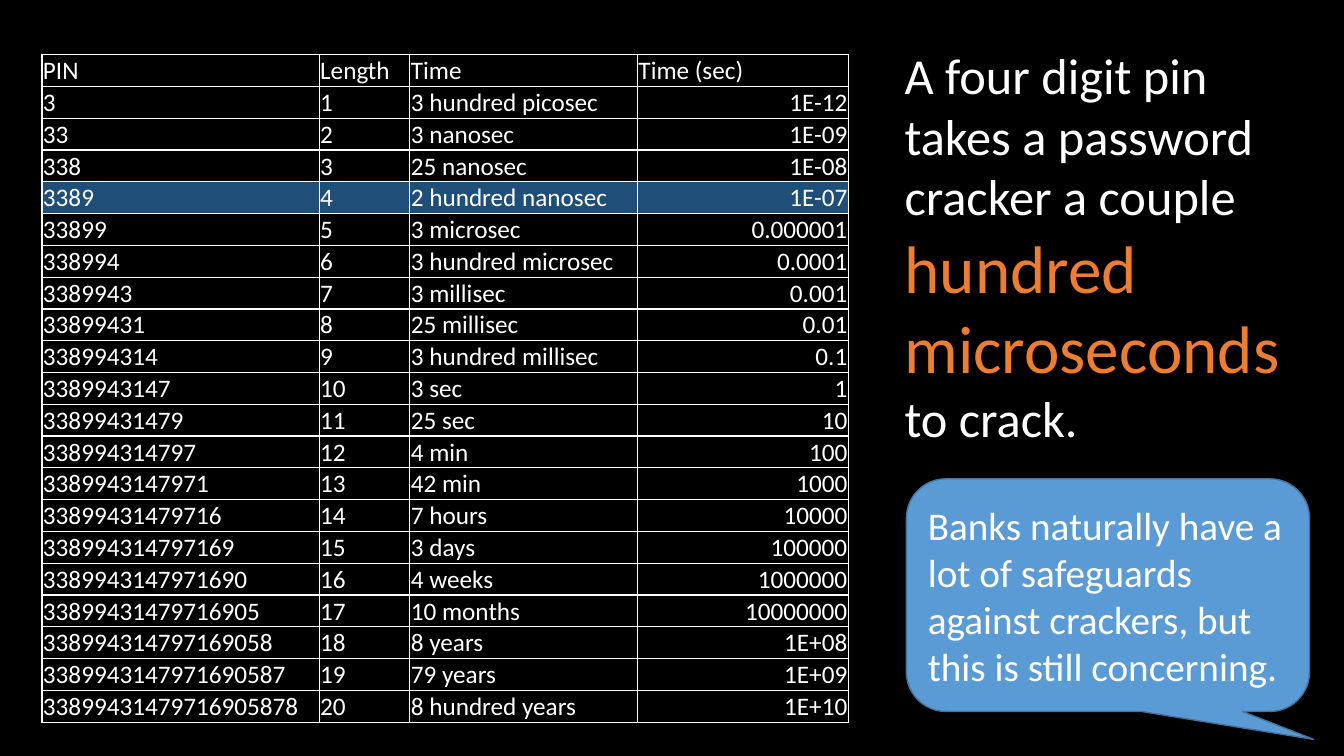
from lxml import etree
from pptx import Presentation
from pptx import util as u
from pptx.dml.color import RGBColor
from pptx.enum import shapes, text
from pptx.oxml import ns

BLACK = RGBColor(0x00, 0x00, 0x00)
WHITE = RGBColor(0xFF, 0xFF, 0xFF)
NAVY = RGBColor(0x1F, 0x4E, 0x79)
ORANGE = RGBColor(0xED, 0x7D, 0x31)
BLUE = RGBColor(0x5B, 0x9B, 0xD5)
DARK_BLUE = RGBColor(0x43, 0x73, 0x9E)

FULL_PIN = "33899431479716905878"
HEADINGS = ("PIN", "Length", "Time", "Time (sec)")
CRACK_TIMES = (
    ("3 hundred picosec", "1E-12"),
    ("3 nanosec", "1E-09"),
    ("25 nanosec", "1E-08"),
    ("2 hundred nanosec", "1E-07"),
    ("3 microsec", "0.000001"),
    ("3 hundred microsec", "0.0001"),
    ("3 millisec", "0.001"),
    ("25 millisec", "0.01"),
    ("3 hundred millisec", "0.1"),
    ("3 sec", "1"),
    ("25 sec", "10"),
    ("4 min", "100"),
    ("42 min", "1000"),
    ("7 hours", "10000"),
    ("3 days", "100000"),
    ("4 weeks", "1000000"),
    ("10 months", "10000000"),
    ("8 years", "1E+08"),
    ("79 years", "1E+09"),
    ("8 hundred years", "1E+10"),
)
PIN_LENGTH = 4


def apply(target, values):
    for name, value in values.items():
        setattr(target, name, value)


class SlideBuilder:
    """Places elements on a grid of 32 columns by 18 rows."""

    font_name = "Calibri"
    columns, rows = 32, 18

    def __init__(self, presentation):
        self.column = presentation.slide_width / self.columns
        self.row = presentation.slide_height / self.rows
        self.slide = presentation.slides.add_slide(presentation.slide_layouts[6])
        self.fill(self.slide.background, BLACK)

    def box(self, left, top, width, height):
        return (round(left * self.column), round(top * self.row),
                round(width * self.column), round(height * self.row))

    def fill(self, target, color):
        target.fill.solid()
        target.fill.fore_color.rgb = color

    def add_words(self, paragraph, words, size, color=WHITE):
        run = paragraph.add_run()
        run.text = words
        apply(run.font, {"name": self.font_name, "size": u.Pt(size)})
        run.font.color.rgb = color

    def border(self, cell, color):
        properties = cell._tc.get_or_add_tcPr()
        for index, side in enumerate(("a:lnL", "a:lnR", "a:lnT", "a:lnB")):
            line = etree.Element(ns.qn(side), w=str(u.Pt(1)))
            solid = etree.SubElement(line, ns.qn("a:solidFill"))
            etree.SubElement(solid, ns.qn("a:srgbClr"), val=str(color))
            properties.insert(index, line)

    def table(self, left, top, widths, row_height, records, marked_row):
        place = self.box(left, top, sum(widths), row_height * len(records))
        table = self.slide.shapes.add_table(len(records), len(widths), *place).table
        for column, width in zip(table.columns, widths):
            column.width = round(width * self.column)
        for i, record in enumerate(records):
            table.rows[i].height = round(row_height * self.row)
            for j, words in enumerate(record):
                cell = table.cell(i, j)
                apply(cell, {
                    "margin_left": u.Inches(0.01),
                    "margin_right": u.Inches(0.01),
                    "margin_top": u.Inches(0.01),
                    "margin_bottom": 0,
                    "vertical_anchor": text.MSO_ANCHOR.BOTTOM,
                })
                self.fill(cell, NAVY if i == marked_row else BLACK)
                self.border(cell, WHITE)
                paragraph = cell.text_frame.paragraphs[0]
                if i > 0 and j == len(widths) - 1:
                    paragraph.alignment = text.PP_ALIGN.RIGHT
                self.add_words(paragraph, words, 18)

    def text_box(self, place, runs):
        frame = self.slide.shapes.add_textbox(*self.box(*place)).text_frame
        apply(frame, {"word_wrap": True,
                      "auto_size": text.MSO_AUTO_SIZE.SHAPE_TO_FIT_TEXT})
        for words, size, color in runs:
            self.add_words(frame.paragraphs[0], words, size, color)

    def callout(self, place, words, size, adjustments):
        shape = self.slide.shapes.add_shape(
            shapes.MSO_SHAPE.ROUNDED_RECTANGULAR_CALLOUT, *self.box(*place))
        shape.shadow.inherit = False
        for index, value in enumerate(adjustments):
            shape.adjustments[index] = value
        self.fill(shape, BLUE)
        shape.line.color.rgb = DARK_BLUE
        shape.line.width = u.Pt(1)
        apply(shape.text_frame, {"word_wrap": True,
                                 "vertical_anchor": text.MSO_ANCHOR.MIDDLE})
        paragraph = shape.text_frame.paragraphs[0]
        paragraph.alignment = text.PP_ALIGN.LEFT
        self.add_words(paragraph, words, size)


def main():
    presentation = Presentation()
    apply(presentation, {"slide_width": u.Inches(13.33),
                         "slide_height": u.Inches(7.5)})
    builder = SlideBuilder(presentation)

    # Cracking time for each PIN length
    records = [HEADINGS] + [
        (FULL_PIN[:length], str(length), *times)
        for length, times in enumerate(CRACK_TIMES, start=1)
    ]
    builder.table(1, 1.3, (6.6, 2.16, 5.42, 5.02), 0.74, records, PIN_LENGTH)

    # Main message
    builder.text_box((21.3, 0.94, 10.18, 11.06), (
        ("A four digit pin takes a password cracker a couple ", 36, WHITE),
        ("hundred microseconds ", 48, ORANGE),
        ("to crack.", 36, WHITE),
    ))

    # Side remark
    builder.callout(
        (21.58, 11.4, 9.6, 5.54),
        "Banks naturally have a lot of safeguards against crackers, "
        "but this is still concerning.",
        28, (0.51, 0.62, 0.17))

    presentation.save("out.pptx")


if __name__ == "__main__":
    main()
